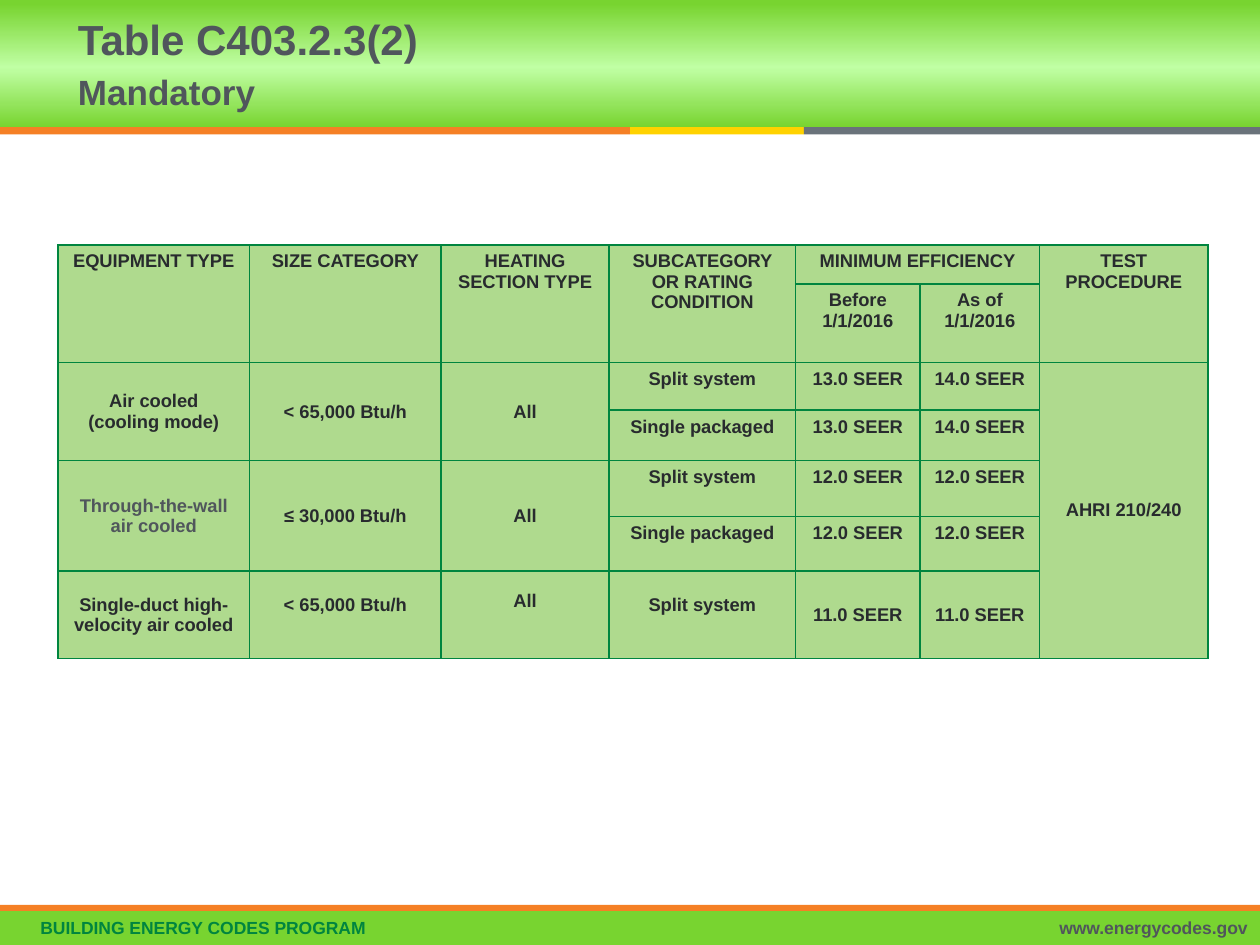
from pptx import Presentation
from pptx.dml.color import RGBColor
from pptx.enum.shapes import MSO_SHAPE
from pptx.enum.text import MSO_ANCHOR, PP_ALIGN
from pptx.oxml import parse_xml
from pptx.oxml.ns import nsdecls
from pptx.util import Pt

WIDTH, HEIGHT = 720, 540
GREEN, PALE_GREEN, DARK_GREEN = "78D430", "C0FFA4", "00853F"
ORANGE, YELLOW, SLATE = "F58025", "FFD200", "6A737B"
GRAY_TEXT, DARK_TEXT, CELL_GREEN = "50565C", "282B2E", "AFDA8E"

COLUMNS = [109.6, 109.4, 96, 106.6, 71.1, 68.3, 96.3]
ROWS = [22.3, 42.3, 27.1, 28.9, 32, 31.1, 50]
# None marks a place covered by a merged cell
EQUIPMENT = [
    ["EQUIPMENT TYPE", "SIZE CATEGORY", "HEATING SECTION TYPE",
     "SUBCATEGORY OR RATING CONDITION", "MINIMUM EFFICIENCY", None, "TEST PROCEDURE"],
    [None, None, None, None, "Before 1/1/2016", "As of 1/1/2016", None],
    ["Air cooled\n(cooling mode)", "< 65,000 Btu/h", "All",
     "Split system", "13.0 SEER", "14.0 SEER", "AHRI 210/240"],
    [None, None, None, "Single packaged", "13.0 SEER", "14.0 SEER", None],
    ["Through-the-wall air cooled", "≤ 30,000 Btu/h", "All",
     "Split system", "12.0 SEER", "12.0 SEER", None],
    [None, None, None, "Single packaged", "12.0 SEER", "12.0 SEER", None],
    ["Single-duct high-velocity air cooled", "< 65,000 Btu/h", "All",
     "Split system", "11.0 SEER", "11.0 SEER", None],
]
# Extra bottom margin lifts these cells of the last row
LIFTED = {(6, 1): 15, (6, 2): 19.6, (6, 3): 15}


def color(hex_code):
    return RGBColor.from_string(hex_code)


def add_run(paragraph, text, size, hex_code):
    run = paragraph.add_run()
    run.text = text
    run.font.name = "Arial"
    run.font.size = Pt(size)
    run.font.bold = True
    run.font.color.rgb = color(hex_code)


def add_bar(slide, left, top, width, height, hex_code):
    bar = slide.shapes.add_shape(MSO_SHAPE.RECTANGLE, Pt(left), Pt(top), Pt(width), Pt(height))
    bar.shadow.inherit = False
    bar.line.fill.background()
    bar.fill.solid()
    bar.fill.fore_color.rgb = color(hex_code)
    return bar


def add_text_box(slide, left, top, width, height):
    frame = slide.shapes.add_textbox(Pt(left), Pt(top), Pt(width), Pt(height)).text_frame
    frame.word_wrap = True
    frame.vertical_anchor = MSO_ANCHOR.MIDDLE
    return frame.paragraphs[0]


def shade_band(band):
    """Vertical gradient, pale in the middle."""
    stops = "".join(
        f'<a:gs pos="{position * 1000}"><a:srgbClr val="{shade}"/></a:gs>'
        for position, shade in [(0, GREEN), (47, PALE_GREEN), (97, GREEN)])
    gradient = parse_xml(
        f'<a:gradFill {nsdecls("a")} rotWithShape="1"><a:gsLst>{stops}</a:gsLst>'
        '<a:lin ang="16200000" scaled="0"/></a:gradFill>')
    properties = band.fill._xPr
    properties.replace(properties.solidFill, gradient)


def add_header(slide, left, top, width, height):
    shade_band(add_bar(slide, left, top, width, height, GREEN))
    # Three-colour stripe under the band
    stripe_left = left
    for share, shade in [(0.5, ORANGE), (0.138, YELLOW), (0.362, SLATE)]:
        add_bar(slide, stripe_left, top + height, width * share, 4.1, shade)
        stripe_left += width * share
    # Title
    title = add_text_box(slide, left + 37.5, top, 422.6, height)
    title.line_spacing = Pt(28)
    add_run(title, "Table C403.2.3(2)", 24, GRAY_TEXT)
    title.add_line_break()
    add_run(title, "Mandatory", 20, GRAY_TEXT)


def add_footer(slide, left, top, width, height):
    add_bar(slide, left, top, width, 3.6, ORANGE)
    add_bar(slide, left, top + 3.6, width, height - 3.6, GREEN)
    program = add_text_box(slide, left + 16, top + 3.6, 500, 18.7)
    add_run(program, "BUILDING ENERGY CODES PROGRAM", 10, DARK_GREEN)
    website = add_text_box(slide, left + width - 200, top + 3.6, 200, 18.7)
    website.alignment = PP_ALIGN.RIGHT
    add_run(website, "www.energycodes.gov", 10, GRAY_TEXT)


def add_borders(cell):
    properties = cell._tc.get_or_add_tcPr()
    for side in ("lnL", "lnR", "lnT", "lnB"):
        properties.append(parse_xml(
            f'<a:{side} {nsdecls("a")} w="12700"><a:solidFill>'
            f'<a:srgbClr val="{DARK_GREEN}"/></a:solidFill></a:{side}>'))


def fill_cell(cell, text, row, column):
    add_borders(cell)
    cell.fill.solid()
    cell.fill.fore_color.rgb = color(CELL_GREEN)
    if text is None:
        return
    centered = row == 6 or (row >= 2 and column in (0, 1, 2, 6))
    cell.vertical_anchor = MSO_ANCHOR.MIDDLE if centered else MSO_ANCHOR.TOP
    cell.margin_bottom = Pt(LIFTED.get((row, column), 3.6))
    paragraph = cell.text_frame.paragraphs[0]
    paragraph.alignment = PP_ALIGN.CENTER
    shade = GRAY_TEXT if (row, column) == (4, 0) else DARK_TEXT
    for number, line in enumerate(text.split("\n")):
        if number:
            paragraph.add_line_break()
        add_run(paragraph, line, 10.5, shade)


def add_equipment_table(slide, left, top):
    table = slide.shapes.add_table(
        len(ROWS), len(COLUMNS), Pt(left), Pt(top), Pt(sum(COLUMNS)), Pt(sum(ROWS))).table
    table.first_row = table.horz_banding = False
    for column, width in zip(table.columns, COLUMNS):
        column.width = Pt(width)
    for row, height in zip(table.rows, ROWS):
        row.height = Pt(height)
    for row, texts in enumerate(EQUIPMENT):
        for column, text in enumerate(texts):
            fill_cell(table.cell(row, column), text, row, column)
    # Two-row cells, the efficiency heading and the shared test procedure
    pairs = [(0, column) for column in (0, 1, 2, 3, 6)]
    pairs += [(row, column) for row in (2, 4) for column in (0, 1, 2)]
    for row, column in pairs:
        table.cell(row, column).merge(table.cell(row + 1, column))
    table.cell(0, 4).merge(table.cell(0, 5))
    table.cell(2, 6).merge(table.cell(6, 6))


def main():
    presentation = Presentation()
    presentation.slide_width, presentation.slide_height = Pt(WIDTH), Pt(HEIGHT)
    slide = presentation.slides.add_slide(presentation.slide_layouts[6])
    add_header(slide, 0, 0, WIDTH, 72.7)
    add_footer(slide, 0, 517, WIDTH, 23)
    add_equipment_table(slide, 33.1, 140)
    presentation.save("out.pptx")


if __name__ == "__main__":
    main()
